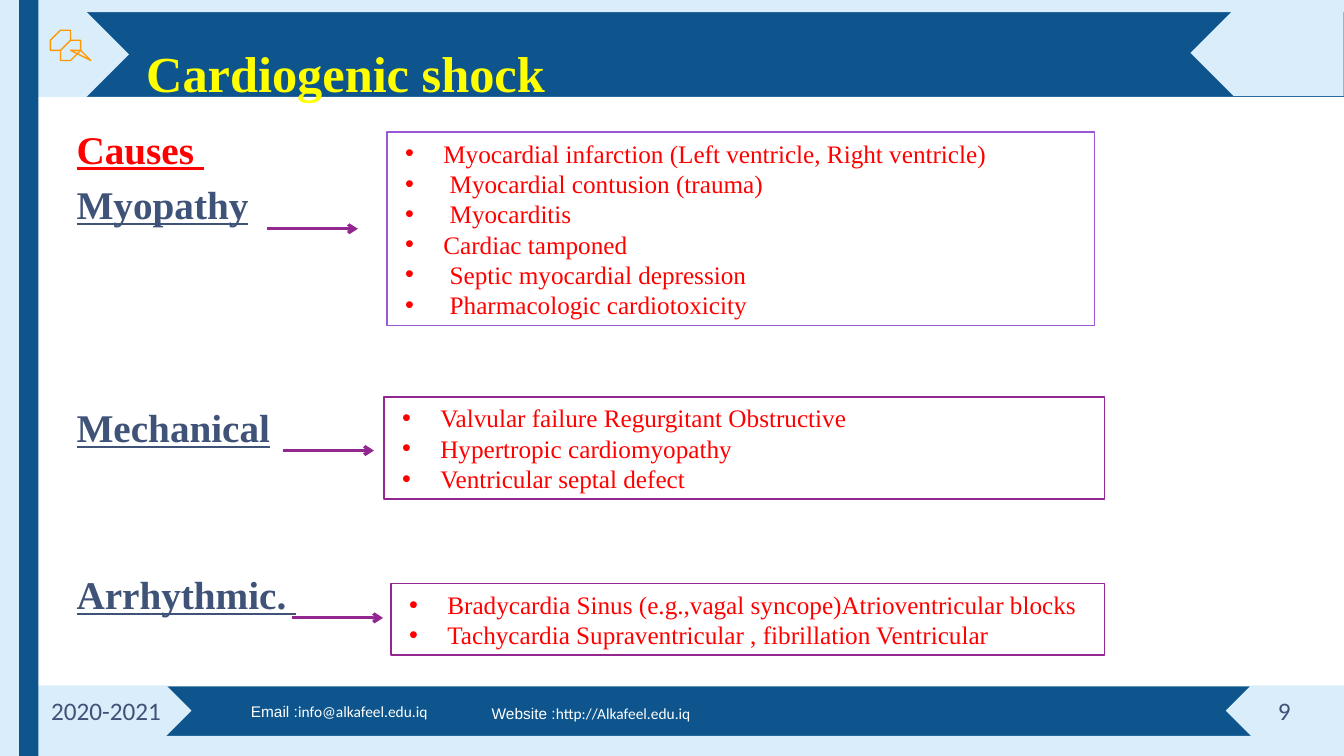
from lxml.etree import SubElement as Sub
from pptx import Presentation
from pptx.dml.color import RGBColor as RGB
from pptx.enum.shapes import MSO_CONNECTOR as CONN, MSO_SHAPE as SHAPE
from pptx.enum.text import MSO_ANCHOR as ANCHOR, PP_ALIGN as ALIGN
from pptx.oxml.ns import qn
from pptx.util import Inches, Pt

COLORS = {"navy": "0D558C", "sky": "DAEDFB", "white": "FFFFFF", "slate": "3F5378",
          "red": "FF0000", "yellow": "FFFF00", "orange": "FF9800",
          "violet": "9B57D3", "purple": "92278F"}
SERIF, SANS, PLAIN = "Times New Roman", "Calibri", "Arial"
STYLES = {
    "title": {"name": SERIF, "size": Pt(36), "bold": True, "color": "yellow"},
    "causes": {"name": SERIF, "size": Pt(28), "bold": True, "underline": True, "color": "red"},
    "group": {"name": SERIF, "size": Pt(28), "bold": True, "underline": True, "color": "slate"},
    "bullet": {"name": SERIF, "size": Pt(18), "color": "red"},
    "footer": {"name": SANS, "size": Pt(18), "color": "slate"},
    "label": {"name": PLAIN, "size": Pt(11), "color": "white"},
    "contact": {"name": SANS, "size": Pt(11), "color": "white"},
}
CELL = 0.1
COLS, ROWS = 133.33, 75


def grid(*cells):
    return [Inches(c * CELL) for c in cells]


class Deck:
    """Draws styled elements on the current slide, measured in grid cells."""

    def __init__(self, prs):
        self.s = prs.slides.add_slide(prs.slide_layouts[6])

    def color(self, name):
        return RGB.from_string(COLORS[name])

    def paint(self, sp, fill=None, line=None, width=1):
        sp.shadow.inherit = False
        if fill:
            sp.fill.solid()
            sp.fill.fore_color.rgb = self.color(fill)
        else:
            sp.fill.background()
        if line:
            sp.line.color.rgb = self.color(line)
            sp.line.width = Pt(width)
        else:
            sp.line.fill.background()

    def block(self, fill, *box, kind=SHAPE.RECTANGLE, turn=0, line=None):
        sp = self.s.shapes.add_shape(kind, *grid(*box))
        sp.rotation = turn
        self.paint(sp, fill, line)
        return sp

    def run(self, p, text, style):
        r = p.add_run()
        r.text = text
        for key, value in STYLES[style].items():
            if key == "color":
                r.font.color.rgb = self.color(value)
            else:
                setattr(r.font, key, value)

    def text(self, runs, *box, inset=True):
        tf = self.s.shapes.add_textbox(*grid(*box)).text_frame
        tf.word_wrap = True
        if not inset:
            for side in ("left", "top", "right", "bottom"):
                setattr(tf, f"margin_{side}", 0)
        for text, style in runs:
            self.run(tf.paragraphs[0], text, style)

    def bullets(self, items, line, *box):
        tf = self.block("white", *box, line=line).text_frame
        tf.word_wrap = True
        tf.vertical_anchor = ANCHOR.MIDDLE
        for i, item in enumerate(items):
            p = tf.add_paragraph() if i else tf.paragraphs[0]
            p.alignment = ALIGN.JUSTIFY
            pPr = p._p.get_or_add_pPr()
            pPr.set("marL", str(Inches(0.46)))
            pPr.set("indent", str(Inches(-0.38)))
            Sub(pPr, qn("a:buFont")).set("typeface", PLAIN)
            Sub(pPr, qn("a:buChar")).set("char", "•")
            self.run(p, item, "bullet")

    def arrow(self, x, y, length):
        c = self.s.shapes.add_connector(CONN.STRAIGHT, *grid(x, y, x + length, y))
        c.line.color.rgb = self.color("purple")
        c.line.width = Pt(2.25)
        Sub(c.line._get_or_add_ln(), qn("a:tailEnd")).set("type", "arrow")
        Sub(c._element.spPr, qn("a:effectLst"))

    def outline(self, points, closed):
        start, *rest = points
        fb = self.s.shapes.build_freeform(*start, scale=Inches(CELL))
        fb.add_line_segments(rest, close=closed)
        self.paint(fb.convert_to_shape(), line="orange", width=0.96)


BANDS = [("navy", 1, 72), ("sky", 73, 2), ("white", 9.6, 58.5), ("sky", 0, 1.2)]
PLATES = [(121.6, 68, 11.73, 5, 180), (3, 68, 16, 5, 0),
          (118.1, 1, 15.2, 8.5, 180), (3.7, 1.2, 9.1, 8.4, 0)]
PIN = [
    ([(7.7, 5.1), (8.9, 6.3), (9, 6.5), (8.8, 6.4), (7.4, 5.4)], True),
    ([(6.7, 3.8), (5.8, 4.6), (5.4, 4.6), (5.2, 4.4), (6.4, 3.4), (6.6, 3.3), (6.7, 3.5)], True),
    ([(6.7, 3.8), (7.4, 4.4), (7.7, 4.3), (8.1, 4.3), (8.4, 4.5), (8.4, 4.6), (6.7, 6),
      (6.5, 5.9), (6.4, 5.6), (6.4, 5.3), (6.5, 5.1), (5.8, 4.6)], False),
    ([(7.2, 4.5), (6.8, 4.1)], False),
]
HEADINGS = [("Causes ", "causes", 0), ("Myopathy", "group", 1),
            ("Mechanical", "group", 5), ("Arrhythmic. ", "group", 8)]
HEAD_TOP, HEAD_PITCH = 12.4, 5.52
CAUSES = [
    (["Myocardial infarction (Left ventricle, Right ventricle)",
      " Myocardial contusion (trauma)", " Myocarditis", "Cardiac tamponed",
      " Septic myocardial depression", " Pharmacologic cardiotoxicity"],
     "violet", (38.4, 13.1, 70.2, 19.2), (26.5, 22.7)),
    (["Valvular failure Regurgitant Obstructive", "Hypertropic cardiomyopathy",
      "Ventricular septal defect"],
     "purple", (38.1, 39.4, 71.5, 10.1), (28.1, 44.7)),
    (["Bradycardia Sinus (e.g.,vagal syncope)Atrioventricular blocks",
      "Tachycardia Supraventricular , fibrillation Ventricular"],
     "purple", (38.8, 57.9, 70.8, 7.1), (29, 61.3)),
]


def main():
    prs = Presentation()
    prs.slide_width, prs.slide_height = grid(COLS, ROWS)
    deck = Deck(prs)
    for fill, top, height in BANDS:
        deck.block(fill, 0, top, COLS, height)
    for *box, turn in PLATES:
        deck.block("sky", *box, kind=SHAPE.PENTAGON, turn=turn)
    for points, closed in PIN:
        deck.outline(points, closed)
    for fill, left in (("sky", 0), ("navy", 1.9)):
        deck.block(fill, left, 0, 1.9, ROWS)

    deck.text([("Cardiogenic shock", "title")], 14.5, 4.2, 100, 5.5, inset=False)
    for text, style, row in HEADINGS:
        deck.text([(text, style)], 7.6, HEAD_TOP + row * HEAD_PITCH, 28, 4.5, inset=False)
    for items, line, box, start in CAUSES:
        deck.bullets(items, line, *box)
        deck.arrow(*start, 9)

    deck.text([("2020-2021", "footer")], 4.1, 68.5, 13.1, 4)
    deck.text([("Email :", "label"), ("info@alkafeel.edu.iq", "contact")], 23.9, 69.2, 23.8, 2.9)
    deck.text([("Website :", "label"), ("http://Alkafeel.edu.iq", "contact")], 47.8, 69.4, 24.4, 2.9)
    deck.text([("9", "footer")], 125.8, 68.5, 6.3, 4)
    prs.save("out.pptx")


if __name__ == "__main__":
    main()
